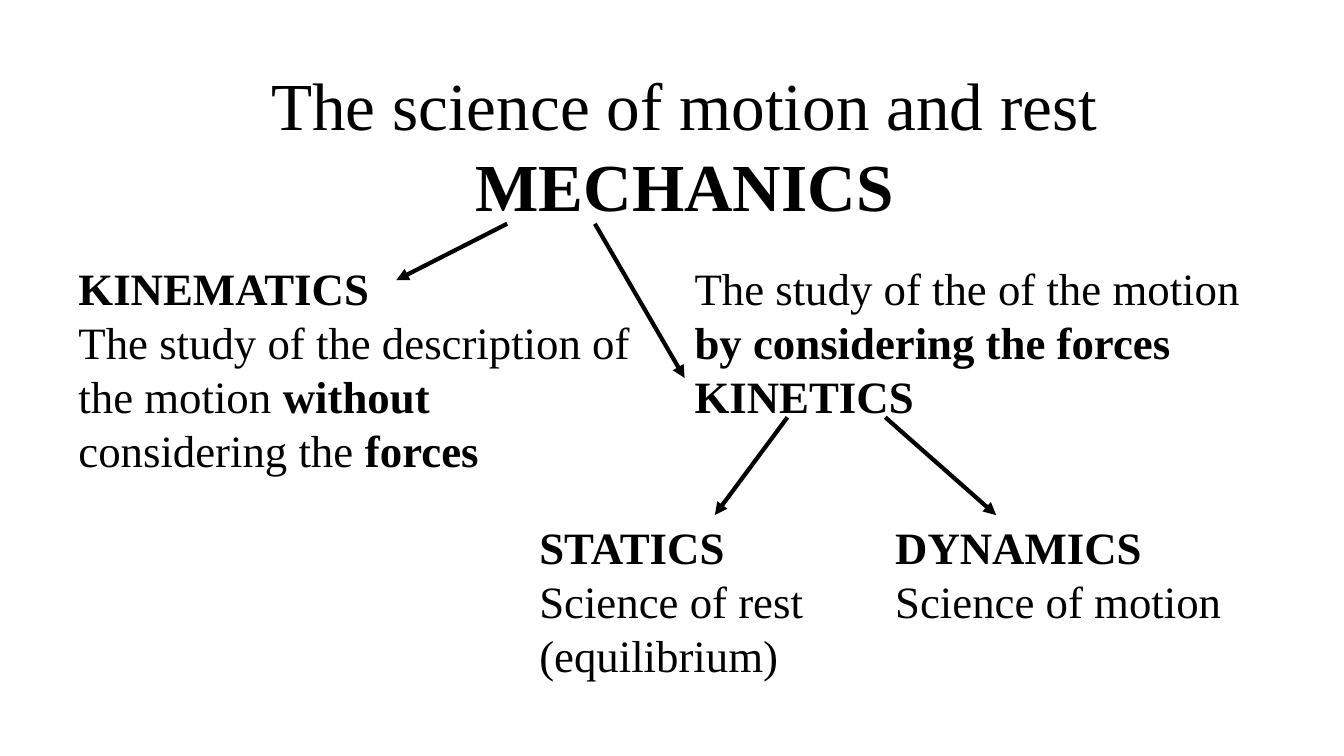
from lxml.etree import SubElement
from pptx import Presentation
from pptx.dml.color import RGBColor
from pptx.enum.shapes import MSO_CONNECTOR
from pptx.enum.text import MSO_ANCHOR, MSO_AUTO_SIZE, PP_ALIGN
from pptx.oxml.ns import qn
from pptx.util import Inches, Pt

COLORS = {"ink": "000000", "background": "FFFFFF"}
FONT = "Times New Roman"
FRAME = {"word_wrap": True, "auto_size": MSO_AUTO_SIZE.NONE,
         "vertical_anchor": MSO_ANCHOR.TOP,
         "margin_left": Inches(0.1), "margin_right": Inches(0.1),
         "margin_top": Inches(0.05), "margin_bottom": Inches(0.05)}

HEADING = [[("The science of motion and rest", False)], [("MECHANICS", True)]]
BRANCHES = [
    ((0.68, 2.54, 5.7, 2.26),
     [[("KINEMATICS", True)],
      [("The study of the description of the motion ", False), ("without", True),
       (" considering the ", False), ("forces", True)]]),
    ((6.79, 2.54, 5.7, 1.72),
     [[("The study of the of the motion ", False),
       ("by considering the forces", True)],
      [("KINETICS", True)]]),
    ((5.25, 5.11, 3.09, 1.72),
     [[("STATICS", True)], [("Science of rest (equilibrium)", False)]]),
    ((8.78, 5.11, 4.18, 1.18),
     [[("DYNAMICS", True)], [("Science of motion", False)]]),
]
ARROWS = [
    ((5.03, 2.22), (3.93, 2.78)),
    ((5.9, 2.22), (6.79, 3.75)),
    ((7.81, 4.14), (7.09, 5.11)),
    ((8.78, 4.14), (9.88, 5.11)),
]


def set_all(obj, values):
    """Set every attribute in values on obj."""
    for name, value in values.items():
        setattr(obj, name, value)


def write_text(tf, paragraphs, size, align):
    """Fill a text frame with paragraphs of (text, bold) runs."""
    set_all(tf, FRAME)
    for i, runs in enumerate(paragraphs):
        p = tf.add_paragraph() if i else tf.paragraphs[0]
        set_all(p, {"alignment": align, "space_before": Pt(0), "space_after": Pt(0)})
        for text, bold in runs:
            r = p.add_run()
            r.text = text
            set_all(r.font, {"name": FONT, "size": Pt(size), "bold": bold})
            r.font.color.rgb = RGBColor.from_string(COLORS["ink"])


def add_heading(s, box):
    """Place the centred heading in the title placeholder."""
    sp = s.shapes.title
    set_all(sp, dict(zip(("left", "top", "width", "height"), map(Inches, box))))
    write_text(sp.text_frame, HEADING, 48, PP_ALIGN.CENTER)


def add_branch(s, box, paragraphs):
    """Place one branch of mechanics with its definition."""
    sp = s.shapes.add_textbox(*map(Inches, box))
    write_text(sp.text_frame, paragraphs, 32, PP_ALIGN.LEFT)


def add_arrow(s, start, end):
    """Draw an arrow from start to end."""
    sp = s.shapes.add_connector(MSO_CONNECTOR.STRAIGHT, *map(Inches, start + end))
    sp.line.width = Pt(3)
    sp.line.color.rgb = RGBColor.from_string(COLORS["ink"])
    SubElement(sp.line._get_or_add_ln(), qn("a:tailEnd"), type="triangle")
    SubElement(sp._element.spPr, qn("a:effectLst"))


def build_slide(prs):
    """Build the tree of the branches of mechanics."""
    s = prs.slides.add_slide(prs.slide_layouts[5])
    s.background.fill.solid()
    s.background.fill.fore_color.rgb = RGBColor.from_string(COLORS["background"])
    add_heading(s, (2.22, 0.58, 9.14, 1.72))
    for box, paragraphs in BRANCHES:
        add_branch(s, box, paragraphs)
    for start, end in ARROWS:
        add_arrow(s, start, end)


def main():
    """Create and save the presentation."""
    prs = Presentation()
    set_all(prs, {"slide_width": Inches(13.33), "slide_height": Inches(7.5)})
    build_slide(prs)
    prs.save("out.pptx")


if __name__ == "__main__":
    main()
